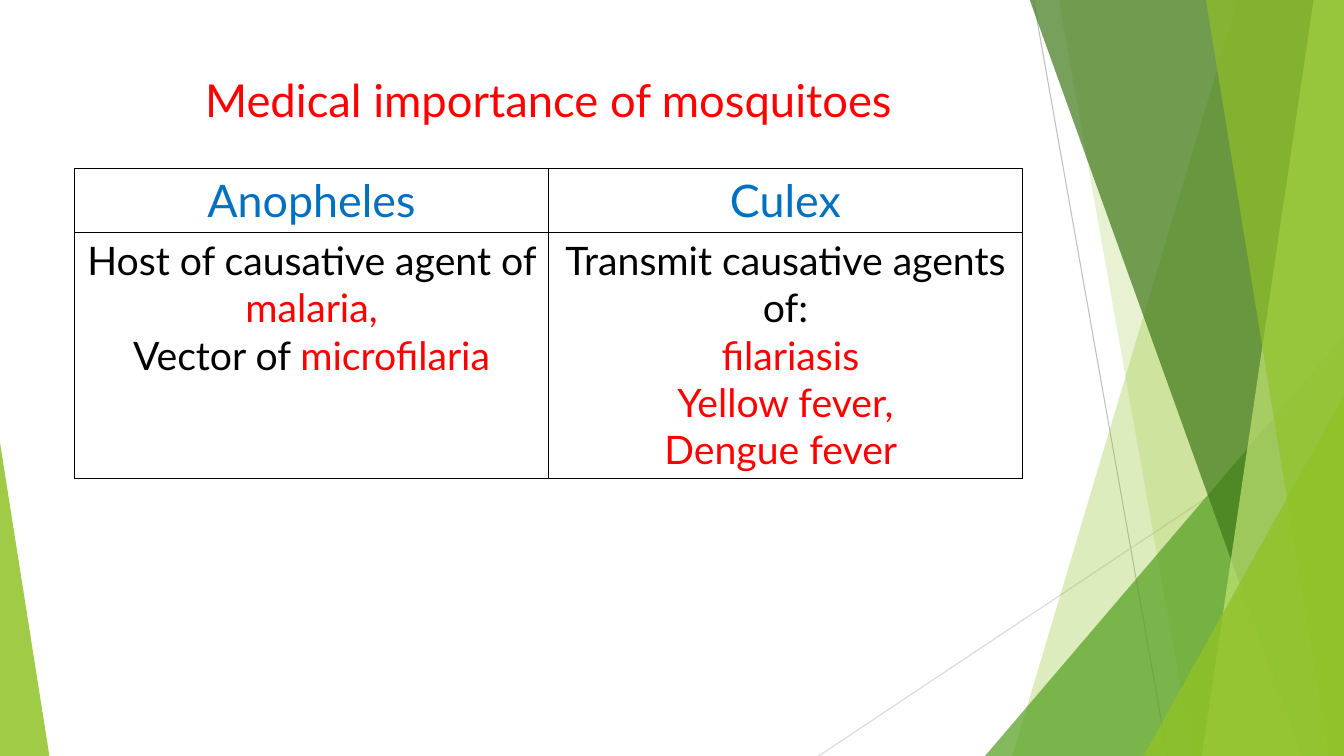
import pptx
import pptx.util
import pptx.dml.color
import pptx.enum.shapes
import pptx.enum.text
import pptx.oxml
import pptx.oxml.ns
import lxml.etree

Inches = pptx.util.Inches
Pt = pptx.util.Pt
SHAPE = pptx.enum.shapes.MSO_SHAPE
CENTER = pptx.enum.text.PP_ALIGN.CENTER
WIDE, HIGH = 13.33, 7.5


class Theme:
    font = "Lato"
    title, head, body = 32.4, 32, 28
    red, blue, black = "FF0000", "0070C0", "000000"
    lime, green, dark, pale = "90C226", "54A021", "3F7819", "C0E474"
    gray, mist = "BFBFBF", "D9D9D9"


def rgb(color):
    return pptx.dml.color.RGBColor.from_string(color)


def add_sub(parent, tag, **attrs):
    return lxml.etree.SubElement(parent, pptx.oxml.ns.qn(tag), attrs)


class Page:
    def __init__(self, deck, theme):
        self.theme = theme
        self.slide = deck.slides.add_slide(deck.slide_layouts[6])
        self.shapes = self.slide.shapes

    def line(self, start, end, color):
        line = self.shapes.add_connector(
            pptx.enum.shapes.MSO_CONNECTOR.STRAIGHT,
            *map(Inches, (*start, *end)))
        line.line.color.rgb = rgb(color)
        line.line.width = Pt(0.75)
        add_sub(line._element.spPr, "a:effectLst")

    def paint(self, shape, color, alpha):
        shape.shadow.inherit = False
        shape.line.fill.background()
        shape.fill.solid()
        shape.fill.fore_color.rgb = rgb(color)
        tint = shape._element.spPr.find(".//" + pptx.oxml.ns.qn("a:srgbClr"))
        add_sub(tint, "a:alpha", val=str(alpha * 1000))

    def band(self, top, base, color, alpha):
        """Fill from a slanted left edge to the right side of the slide."""
        edge = -0.01
        form = self.shapes.build_freeform(Inches(top), Inches(edge))
        points = [(WIDE, edge), (WIDE, HIGH), (base, HIGH)]
        form.add_line_segments([(Inches(x), Inches(y)) for x, y in points])
        self.paint(form.convert_to_shape(), color, alpha)

    def corner(self, left, top, width, peak, color, alpha):
        """Triangle that stands on the bottom of the slide."""
        shape = self.shapes.add_shape(
            SHAPE.ISOSCELES_TRIANGLE,
            *map(Inches, (left, top, width, HIGH - top)))
        shape.adjustments[0] = peak
        self.paint(shape, color, alpha)

    def text(self, frame, lines, size):
        """Each line is a list of (text, color) runs."""
        frame.word_wrap = True
        for i, runs in enumerate(lines):
            para = frame.add_paragraph() if i else frame.paragraphs[0]
            para.alignment = CENTER
            para.font.name = self.theme.font
            para.font.size = Pt(size)
            for words, color in runs:
                run = para.add_run()
                run.text = words
                run.font.color.rgb = rgb(color)

    def title(self, words, left, top, width, height):
        box = self.shapes.add_textbox(
            *map(Inches, (left, top, width, height)))
        self.text(box.text_frame, [[(words, self.theme.red)]],
                  self.theme.title)

    def border(self, cell):
        props = cell._tc.get_or_add_tcPr()
        for side in "LRTB":
            edge = add_sub(props, "a:ln" + side, w=str(Pt(1)))
            fill = add_sub(edge, "a:solidFill")
            add_sub(fill, "a:srgbClr", val=self.theme.black)

    def table(self, rows, sizes, left, top, width, heights):
        table = self.shapes.add_table(
            len(rows), len(rows[0]),
            *map(Inches, (left, top, width, sum(heights)))).table
        table.first_row = table.horz_banding = False
        for r, row in enumerate(rows):
            table.rows[r].height = Inches(heights[r])
            for c, lines in enumerate(row):
                cell = table.cell(r, c)
                self.text(cell.text_frame, lines, sizes[r])
                self.border(cell)
                cell.fill.background()


def main():
    deck = pptx.Presentation()
    deck.slide_width, deck.slide_height = Inches(WIDE), Inches(HIGH)
    look = Theme()
    page = Page(deck, look)

    # Green facets on both sides
    page.line((10.25, 0), (11.58, HIGH), look.gray)
    page.line((WIDE, 4.03), (8.12, HIGH), look.mist)
    page.band(12.28, 10.04, look.lime, 30)
    page.band(10.5, 11.83, look.lime, 20)
    page.corner(9.77, 3.33, 3.56, 1, look.green, 72)
    page.band(10.21, 12.91, look.dark, 70)
    page.band(13.03, 11.92, look.pale, 70)
    page.band(11.96, 13.18, look.lime, 65)
    page.corner(11.34, 3.93, 1.99, 1, look.lime, 80)
    page.corner(0, 4.39, 0.49, 0, look.lime, 85)

    # Title
    page.title("Medical importance of mosquitoes", 0.74, 0.67, 9.4, 0.59)

    # Comparison of the two mosquitoes
    red, black = look.red, look.black
    heads = [[[(name, look.blue)]] for name in ("Anopheles", "Culex")]
    host = [
        [("Host of causative agent of ", black), ("malaria,", red)],
        [("Vector of ", black), ("microfilaria", red)],
    ]
    agents = [
        [("Transmit causative agents of:", black)],
        [(" ", black), ("filariasis", red)],
        [("Yellow fever,", red)],
        [("Dengue fever ", red)],
    ]
    page.table([heads, [host, agents]], (look.head, look.body),
               0.74, 1.67, 9.4, (0.63, 2.44))

    deck.save("out.pptx")


if __name__ == "__main__":
    main()
